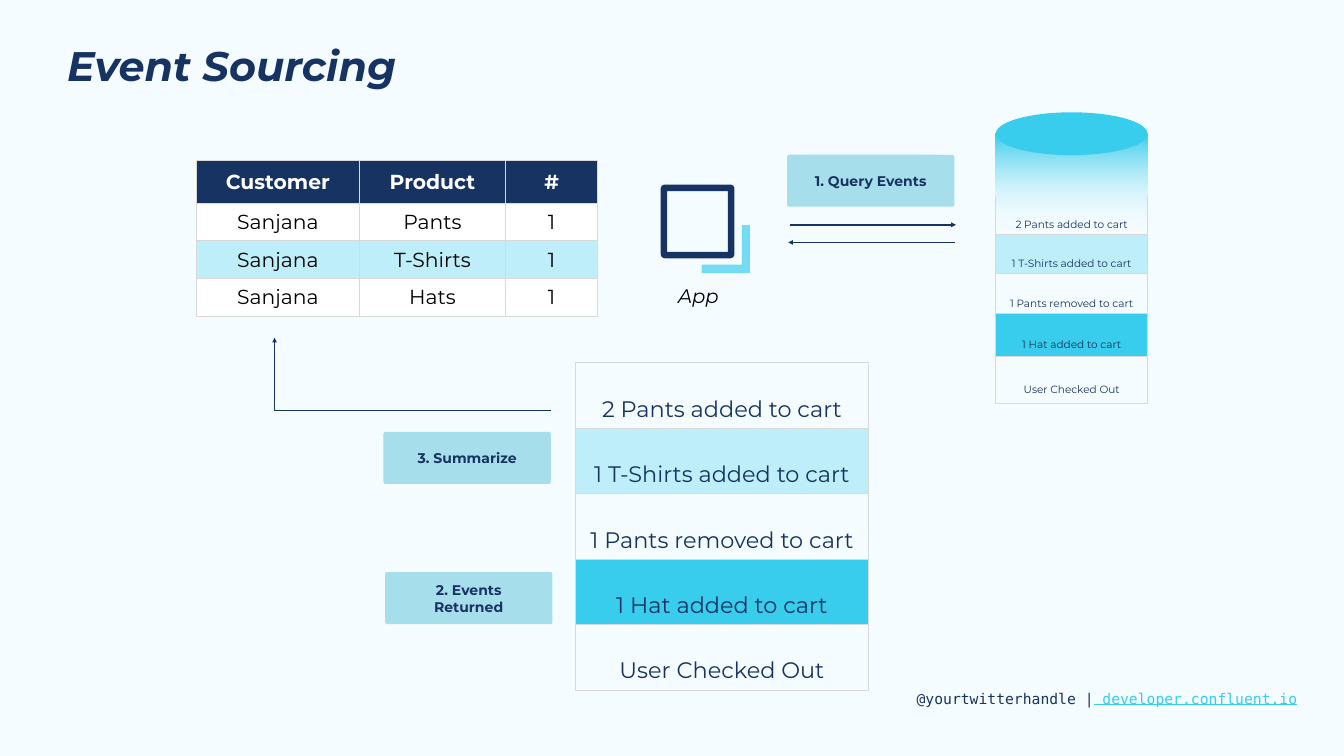
import math

import lxml.etree
import pptx
import pptx.dml.color
import pptx.enum.dml
import pptx.enum.shapes
import pptx.enum.text
import pptx.oxml.ns
import pptx.util

Cm, Pt = pptx.util.Cm, pptx.util.Pt
qn = pptx.oxml.ns.qn
SHAPE = pptx.enum.shapes.MSO_SHAPE
ALIGN = pptx.enum.text.PP_ALIGN
MIDDLE = pptx.enum.text.MSO_ANCHOR.MIDDLE

# Content (lengths in cm)
COLORS = {"background": "F4FCFF", "navy": "173361", "cyan": "38CCED", "sky": "73DBF2",
          "label": "A7DEEB", "border": "D9D9D9", "white": "FFFFFF", "black": "000000"}
TITLE = "Event Sourcing"
FOOTER = [("@yourtwitterhandle |", "navy", False), (" developer.confluent.io", "cyan", True)]
CART = [("Customer", "Product", "#"), ("Sanjana", "Pants", "1"),
        ("Sanjana", "T-Shirts", "1"), ("Sanjana", "Hats", "1")]
CART_FILLS = [("navy", None), ("white", None), ("cyan", 29), ("white", None)]
EVENTS = ["2 Pants added to cart", "1 T-Shirts added to cart", "1 Pants removed to cart",
          "1 Hat added to cart", "User Checked Out"]
EVENT_FILLS = [None, ("cyan", 29), None, ("cyan", None), None]
LABELS = [("3. Summarize", 19.33, 21.77), ("1. Query Events", 39.67, 7.8),
          ("2. Events Returned", 19.41, 28.83)]
ARROWS = [(39.8, 48.18, 11.33, "tailEnd"), (39.73, 48.11, 12.22, "headEnd")]
ELBOW = [(13.84, 17.02), (13.84, 20.68), (27.76, 20.68)]
ICON_CORNER = [(37.8, 13.77), (35.36, 13.77), (35.36, 13.34), (37.39, 13.34),
               (37.39, 11.35), (37.8, 11.35)]
FRAME = {"left": 33.3, "top": 9.3, "size": 3.72, "thickness": 0.33, "radius": 0.22}


def rgb(name):
    return pptx.dml.color.RGBColor.from_string(COLORS[name])


def add_alpha(color_element, percent):
    lxml.etree.SubElement(color_element, qn("a:alpha"), val=str(percent * 1000))


def write(frame, text, *, size, font="Montserrat", color="navy", bold=False, italic=False,
          align=None, spacing=None):
    """Write one paragraph; text is a string or a list of (text, color, underline)."""
    paragraph = frame.paragraphs[0]
    paragraph.alignment = align
    paragraph.line_spacing = spacing
    for words, run_color, underline in [(text, color, None)] if isinstance(text, str) else text:
        run = paragraph.add_run()
        run.text = words
        run.font.name, run.font.size = font, Pt(size)
        run.font.bold, run.font.italic, run.font.underline = bold, italic, underline
        run.font.color.rgb = rgb(run_color)


def set_margins(target, left, top, right, bottom):
    target.margin_left, target.margin_top = Cm(left), Cm(top)
    target.margin_right, target.margin_bottom = Cm(right), Cm(bottom)


def add_text(slide, box, text, margins=(0.25,) * 4, grow=False, **text_format):
    frame = slide.shapes.add_textbox(*map(Cm, box)).text_frame
    frame.word_wrap = True
    if grow:
        frame.auto_size = pptx.enum.text.MSO_AUTO_SIZE.SHAPE_TO_FIT_TEXT
    set_margins(frame, *margins)
    write(frame, text, **text_format)


def add_shape(shapes, kind, box, color=None):
    shape = shapes.add_shape(kind, *map(Cm, box))
    shape.shadow.inherit = False
    shape.line.fill.background()
    if color:
        shape.fill.solid()
        shape.fill.fore_color.rgb = rgb(color)
    return shape


def add_outline(shapes, contours, color=None, closed=True):
    contours = [[(Cm(x), Cm(y)) for x, y in contour] for contour in contours]
    builder = shapes.build_freeform(*contours[0][0])
    for index, contour in enumerate(contours):
        if index:
            builder.move_to(*contour[0])
        builder.add_line_segments(contour[1:], close=closed)
    shape = builder.convert_to_shape()
    shape.shadow.inherit = False
    if color:
        shape.fill.solid()
        shape.fill.fore_color.rgb = rgb(color)
        shape.line.fill.background()
    else:
        shape.fill.background()
    return shape


def style_arrow(shape, end):
    shape.line.color.rgb = rgb("navy")
    shape.line.width = Pt(2.25)
    lxml.etree.SubElement(shape.line._get_or_add_ln(), qn("a:" + end), type="triangle")


def style_cell(cell, fill, hidden=()):
    properties = cell._tc.get_or_add_tcPr()
    for side in "LRTB":
        line = lxml.etree.SubElement(properties, qn("a:ln" + side), w=str(Pt(1.5)))
        if side in hidden:
            lxml.etree.SubElement(line, qn("a:noFill"))
        else:
            solid = lxml.etree.SubElement(line, qn("a:solidFill"))
            lxml.etree.SubElement(solid, qn("a:srgbClr"), val=COLORS["border"])
    if fill is None:
        cell.fill.background()
        return
    color, alpha = fill
    cell.fill.solid()
    cell.fill.fore_color.rgb = rgb(color)
    if alpha:
        add_alpha(properties.find(qn("a:solidFill")).find(qn("a:srgbClr")), alpha)


def add_table(slide, left, top, widths, heights):
    table = slide.shapes.add_table(len(heights), len(widths), Cm(left), Cm(top),
                                   Cm(sum(widths)), Cm(sum(heights))).table
    table.first_row = table.horz_banding = False
    for column, width in zip(table.columns, widths):
        column.width = Cm(width)
    for row, height in zip(table.rows, heights):
        row.height = Cm(height)
    return table


def add_cart(slide):
    table = add_table(slide, 9.91, 8.08, (8.2, 7.37, 4.65), (2.16, 1.9, 1.9, 1.9))
    for r, (row, fill) in enumerate(zip(CART, CART_FILLS)):
        for c, text in enumerate(row):
            cell = table.cell(r, c)
            set_margins(cell, 0.69, 0.33, 0.69, 0.33)
            cell.vertical_anchor = MIDDLE
            write(cell.text_frame, text, size=29, bold=r == 0, align=ALIGN.CENTER,
                  color="black" if r else "white")
            style_cell(cell, fill)


def add_events(slide, left, top, widths, heights, size, open_top=False):
    table = add_table(slide, left, top, widths, heights)
    for r, (text, fill) in enumerate(zip(EVENTS, EVENT_FILLS)):
        for c in range(len(widths)):
            cell = table.cell(r, c)
            set_margins(cell, 0.33, 0.84, 0.33, 0.18)
            cell.vertical_anchor = MIDDLE
            style_cell(cell, fill, hidden="T" if open_top and r == 0 else "")
        first = table.cell(r, 0)
        first.merge(table.cell(r, len(widths) - 1))
        write(first.text_frame, text, size=size, align=ALIGN.CENTER, spacing=1.5)


def frame_contours(left, top, size, thickness, radius):
    outer = []
    for corner, (x, y) in enumerate([(1, 1), (0, 1), (0, 0), (1, 0)]):
        center_x = left + (size - radius if x else radius)
        center_y = top + (size - radius if y else radius)
        for step in range(5):
            angle = math.radians(corner * 90 + step * 22.5)
            outer.append((center_x + radius * math.cos(angle),
                          center_y + radius * math.sin(angle)))
    near, far = thickness, size - thickness
    inner = [(left + x, top + y) for x, y in [(near, near), (far, near), (far, far), (near, far)]]
    return [outer, inner[::-1]]


def add_cylinder(slide):
    shapes = slide.shapes.add_group_shape().shapes
    body = add_shape(shapes, SHAPE.RECTANGLE, (50.19, 6.71, 7.65, 5.18))
    body.rotation = 180
    body.fill.gradient()
    body.fill.gradient_angle = 270
    for stop, color in zip(body.fill.gradient_stops, ("white", "cyan")):
        stop.color.rgb = rgb(color)
    add_alpha(next(body._element.spPr.iter(qn("a:srgbClr"))), 0)
    add_shape(shapes, SHAPE.OVAL, (50.19, 5.66, 7.65, 2.16), "cyan")


def main():
    presentation = pptx.Presentation()
    presentation.slide_width, presentation.slide_height = Cm(67.74), Cm(38.1)
    slide = presentation.slides.add_slide(presentation.slide_layouts[6])
    slide.background.fill.solid()
    slide.background.fill.fore_color.rgb = rgb("background")

    # Footer, title and cart
    add_text(slide, (45.95, 34.49, 19.89, 1.42), FOOTER, grow=True, size=21,
             font="DejaVu Sans Mono")
    add_text(slide, (3.38, 1.96, 57.61, 3.15), TITLE, margins=(0, 0.33, 0.69, 0.33),
             size=59, bold=True, italic=True, spacing=0.9)
    add_cart(slide)

    # App icon
    icon = slide.shapes.add_group_shape().shapes
    add_outline(icon, [ICON_CORNER], "sky")
    add_outline(icon, frame_contours(**FRAME), "navy")
    add_text(slide, (32.61, 14.07, 5.18, 1.7), "App", grow=True, size=28, color="black",
             italic=True, align=ALIGN.CENTER)

    # Event store
    add_cylinder(slide)
    add_events(slide, 50.19, 9.86, (2.9, 3.51, 1.24), (1.83, 1.83, 1.83, 2.21, 2.36), 15,
               open_top=True)

    # Arrows
    for start, end, y, head in ARROWS:
        arrow = slide.shapes.add_connector(pptx.enum.shapes.MSO_CONNECTOR.STRAIGHT,
                                           Cm(start), Cm(y), Cm(end), Cm(y))
        style_arrow(arrow, head)
        lxml.etree.SubElement(arrow._element.spPr, qn("a:effectLst"))
    style_arrow(add_outline(slide.shapes, [ELBOW], closed=False), "headEnd")

    # Step labels
    for text, left, top in LABELS:
        label = add_shape(slide.shapes, SHAPE.ROUNDED_RECTANGLE, (left, top, 8.43, 2.62), "label")
        label.adjustments[0] = 0.04
        label.text_frame.word_wrap = True
        label.text_frame.vertical_anchor = MIDDLE
        set_margins(label.text_frame, *(0.69,) * 4)
        write(label.text_frame, text, size=20, bold=True, align=ALIGN.CENTER)

    # Returned events
    add_events(slide, 29.01, 18.29, (5.61, 6.76, 2.39), (3.3,) * 5, 32)
    presentation.save("out.pptx")


if __name__ == "__main__":
    main()
